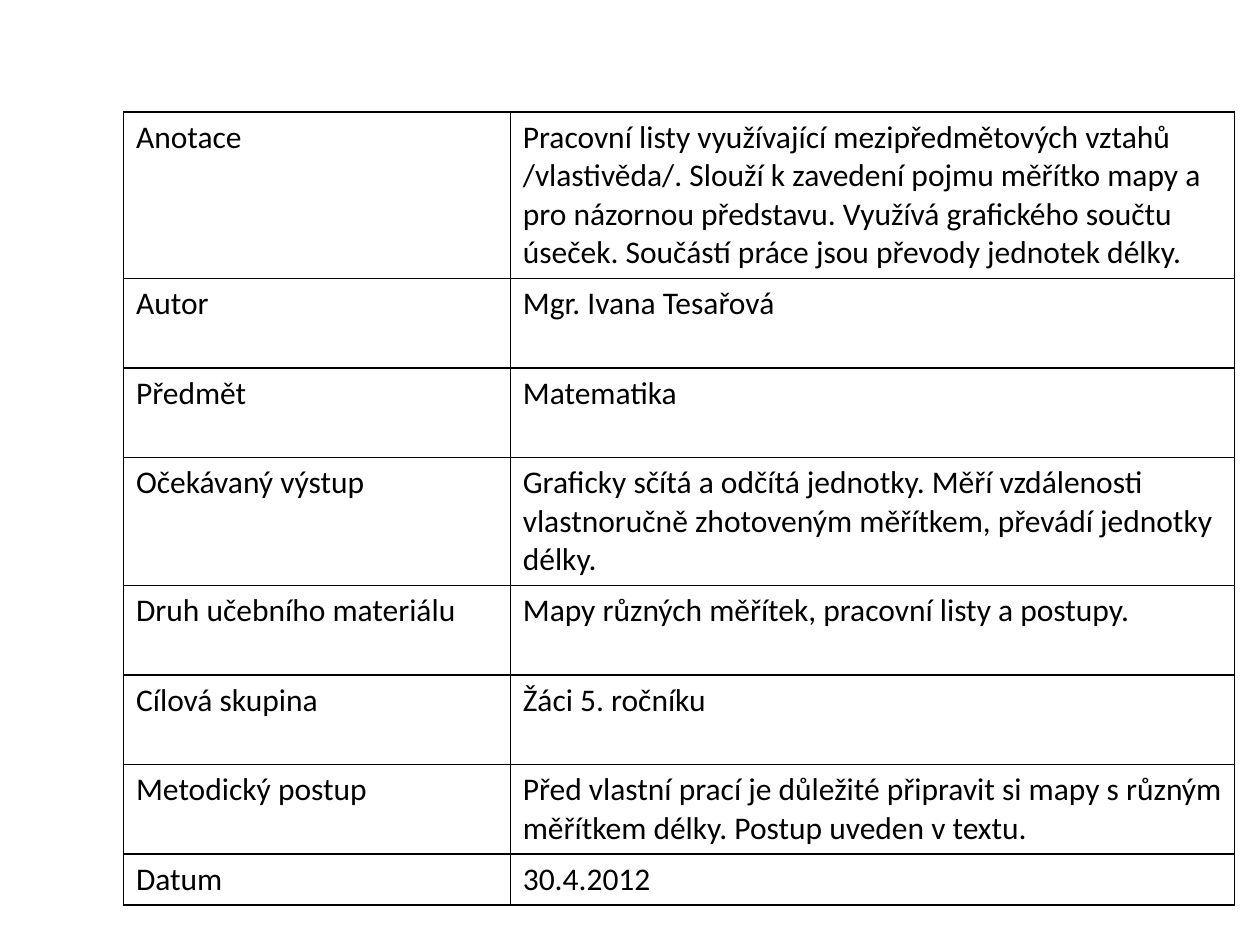
from dataclasses import dataclass

from lxml.etree import SubElement
from pptx import Presentation
from pptx.dml.color import RGBColor as RGB
from pptx.oxml.ns import qn
from pptx.util import Inches, Pt

WIDTH, HEIGHT = 10, 7.5


@dataclass(frozen=True)
class Theme:
    font: str = "Calibri"
    size: int = 18
    ink: str = "000000"
    paper: str = "FFFFFF"
    border: float = 1


def write(tf, text, *, font, size, color):
    r = tf.paragraphs[0].add_run()
    r.text = text
    r.font.name, r.font.size = font, Pt(size)
    r.font.color.rgb = RGB.from_string(color)


def outline(cell, color, width):
    """Draw all four borders of a cell, placed before its fill as the schema asks."""
    props = cell._tc.get_or_add_tcPr()
    for i, side in enumerate(("lnL", "lnR", "lnT", "lnB")):
        line = SubElement(props, qn(f"a:{side}"), w=str(Pt(width)))
        fill = SubElement(line, qn("a:solidFill"))
        SubElement(fill, qn("a:srgbClr"), val=color)
        props.insert(i, line)


class SlideBuilder:
    def __init__(self, prs, theme):
        self.theme = theme
        self.s = prs.slides.add_slide(prs.slide_layouts[6])
        fill = self.s.background.fill
        fill.solid()
        fill.fore_color.rgb = RGB.from_string(theme.paper)

    def table(self, rows, *, left, top, cols, heights):
        """Add a bordered table; lengths are shares of the slide's size."""
        x, y = Inches(left * WIDTH), Inches(top * HEIGHT)
        widths = [Inches(c * WIDTH) for c in cols]
        heights = [Inches(h * HEIGHT) for h in heights]
        table = self.s.shapes.add_table(
            len(rows), len(cols), x, y, sum(widths), sum(heights)).table
        table.first_row = table.horz_banding = False
        for column, width in zip(table.columns, widths):
            column.width = width
        for row, height, texts in zip(table.rows, heights, rows):
            row.height = height
            for cell, text in zip(row.cells, texts):
                self.cell(cell, text)

    def cell(self, cell, text):
        t = self.theme
        cell.fill.background()
        outline(cell, t.ink, t.border)
        write(cell.text_frame, text, font=t.font, size=t.size, color=t.ink)


ANNOTATION = [
    ("Anotace", "Pracovní listy využívající mezipředmětových vztahů /vlastivěda/. "
                "Slouží k zavedení pojmu měřítko mapy a pro názornou představu. "
                "Využívá grafického součtu úseček. "
                "Součástí práce jsou převody jednotek délky."),
    ("Autor", "Mgr. Ivana Tesařová"),
    ("Předmět", "Matematika"),
    ("Očekávaný výstup", "Graficky sčítá a odčítá jednotky. Měří vzdálenosti "
                         "vlastnoručně zhotoveným měřítkem, převádí jednotky délky."),
    ("Druh učebního materiálu", "Mapy různých měřítek, pracovní listy a postupy."),
    ("Cílová skupina", "Žáci 5. ročníku"),
    ("Metodický postup", "Před vlastní prací je důležité připravit si mapy s různým "
                         "měřítkem délky. Postup uveden v textu."),
    ("Datum", "30.4.2012"),
]


def main():
    prs = Presentation()
    prs.slide_width, prs.slide_height = Inches(WIDTH), Inches(HEIGHT)
    tall, short = 0.71 / HEIGHT, 0.38 / HEIGHT
    SlideBuilder(prs, Theme()).table(
        ANNOTATION, left=0.98 / WIDTH, top=0.89 / HEIGHT,
        cols=(3.07 / WIDTH, 5.75 / WIDTH),
        heights=[tall] * (len(ANNOTATION) - 1) + [short])
    prs.save("out.pptx")


if __name__ == "__main__":
    main()
